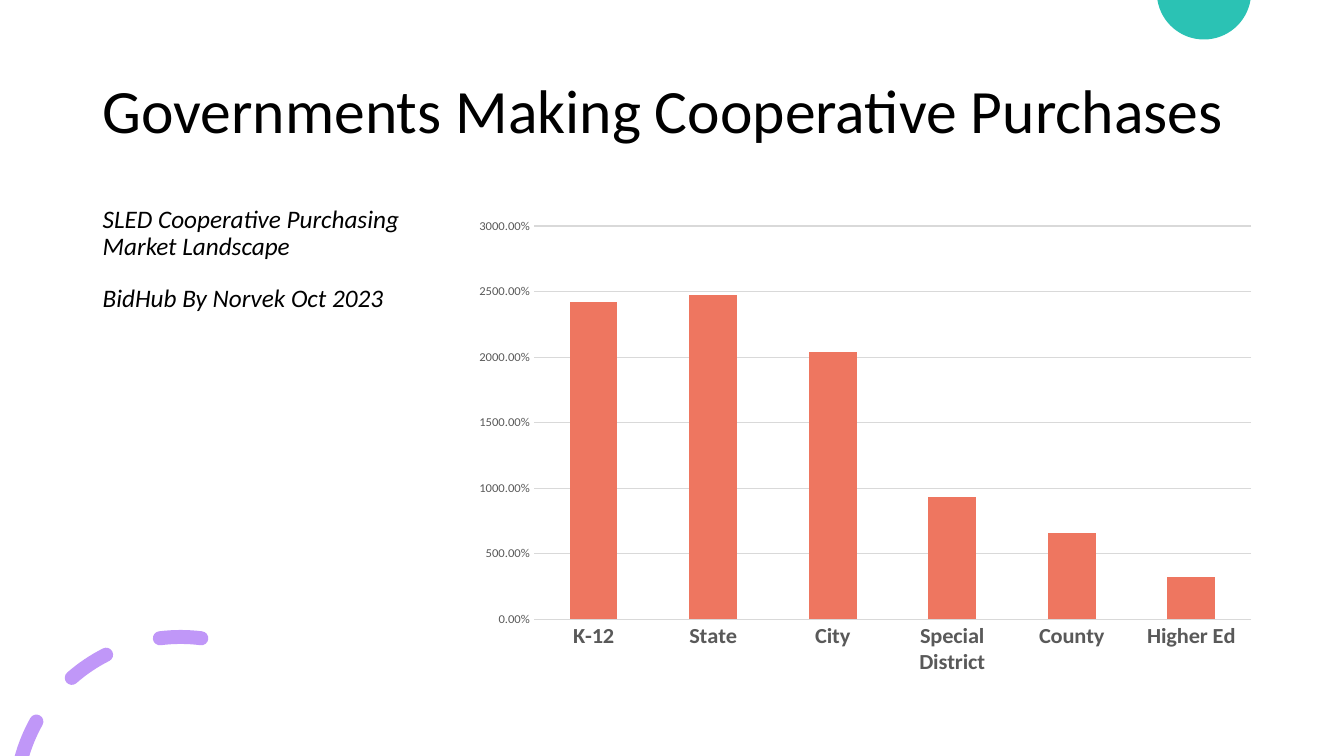
import dataclasses
import math

import lxml.etree
import pptx
import pptx.chart.data
import pptx.dml.color
import pptx.enum.chart
import pptx.enum.text
import pptx.oxml.ns
import pptx.util

Pt = pptx.util.Pt
qn = pptx.oxml.ns.qn
SLIDE_WIDTH, SLIDE_HEIGHT = 960, 540
FONT = "Calibri"
COLORS = {
    "text": "000000",
    "axis": "595959",
    "grid": "D9D9D9",
    "bar": "EE7660",
    "dash": "C097F8",
    "circle": "2BC2B4",
}
Point = tuple[float, float]


@dataclasses.dataclass
class Outline:
    """A closed outline; a segment has one point (line) or three (Bézier curve)."""
    start: Point
    segments: list[list[Point]]


@dataclasses.dataclass
class TextBlock:
    left: float
    top: float
    width: float
    height: float
    paragraphs: list[str]
    size: float
    italic: bool = False
    before: float = 0
    after: float = 0
    anchor: pptx.enum.text.MSO_ANCHOR = pptx.enum.text.MSO_ANCHOR.TOP


def rgb(name: str) -> pptx.dml.color.RGBColor:
    return pptx.dml.color.RGBColor.from_string(COLORS[name])


def on_circle(center: Point, radius: float, degrees: float) -> Point:
    angle = math.radians(degrees)
    return center[0] + radius * math.cos(angle), center[1] - radius * math.sin(angle)


def arc(center: Point, radius: float, start: float, end: float, pieces: int = 1) -> list[list[Point]]:
    """Curves along an arc, in degrees counterclockwise from the right."""
    step = (end - start) / pieces
    handle = 4 / 3 * math.tan(math.radians(step) / 4)
    reach, tilt = radius * math.hypot(1, handle), math.degrees(math.atan(handle))
    curves = []
    for i in range(pieces):
        a, b = start + i * step, start + (i + 1) * step
        curves.append([
            on_circle(center, reach, a + tilt),
            on_circle(center, reach, b - tilt),
            on_circle(center, radius, b),
        ])
    return curves


def round_dash(center: Point, radius: float, half_width: float, middle: float, spread: float) -> Outline:
    """A thick arc with round ends, or cut straight at the slide's bottom edge."""
    start, end = middle - spread, middle + spread
    outer, inner = radius + half_width, radius - half_width
    drop = center[1] - SLIDE_HEIGHT
    outer_end, inner_end = (min(end, 180 - math.degrees(math.asin(drop / r))) for r in (outer, inner))
    if outer_end < end:
        far_end = [[on_circle(center, inner, inner_end)]]
    else:
        far_end = arc(on_circle(center, radius, end), half_width, end, end + 180, 2)
    near_end = arc(on_circle(center, radius, start), half_width, start + 180, start + 360, 2)
    return Outline(
        on_circle(center, outer, start),
        arc(center, outer, start, outer_end) + far_end + arc(center, inner, inner_end, start) + near_end,
    )


def draw_outlines(slide, outlines: list[Outline], color: str) -> None:
    """Draw outlines as one shape, in hundredths of a point."""
    def units(point: Point) -> tuple[int, int]:
        return round(point[0] * 100), round(point[1] * 100)

    builder = slide.shapes.build_freeform(*units(outlines[0].start), scale=Pt(1) / 100)
    for index, outline in enumerate(outlines):
        if index:
            builder.move_to(*units(outline.start))
        builder.add_line_segments([units(p) for segment in outline.segments for p in segment], close=True)
    ornament = builder.convert_to_shape()

    # Turn each run of three points into one curve
    corners = iter(list(ornament._element.iter(qn("a:lnTo"))))
    for segment in (s for outline in outlines for s in outline.segments):
        members = [next(corners) for _ in segment]
        if len(members) == 3:
            curve = lxml.etree.Element(qn("a:cubicBezTo"))
            members[0].addprevious(curve)
            for member in members:
                curve.append(member[0])
                member.getparent().remove(member)

    ornament.shadow.inherit = False
    ornament.fill.solid()
    ornament.fill.fore_color.rgb = rgb(color)
    ornament.line.fill.background()


def style_font(font, size: float, color: str, bold: bool = False, italic: bool = False) -> None:
    font.name = FONT
    font.size = Pt(size)
    font.bold = bold
    font.italic = italic
    font.color.rgb = rgb(color)


def draw_text(slide, block: TextBlock) -> None:
    box = slide.shapes.add_textbox(Pt(block.left), Pt(block.top), Pt(block.width), Pt(block.height))
    frame = box.text_frame
    frame.word_wrap = True
    frame.vertical_anchor = block.anchor
    for index, text in enumerate(block.paragraphs):
        paragraph = frame.add_paragraph() if index else frame.paragraphs[0]
        paragraph.text = text
        paragraph.line_spacing = 0.9
        paragraph.space_before = Pt(block.before if index else 0)
        paragraph.space_after = Pt(block.after)
        style_font(paragraph.font, block.size, "text", italic=block.italic)


def set_plot_layout(chart, x: float, y: float, w: float, h: float) -> None:
    """Fix the inner plot area, in percent of the chart."""
    plot_area = chart.plots[0]._element.getparent()
    layout = plot_area.find(qn("c:layout"))
    if layout is None:
        layout = lxml.etree.Element(qn("c:layout"))
        plot_area.insert(0, layout)
    manual = lxml.etree.SubElement(layout, qn("c:manualLayout"))
    shares = {"x": x / 100, "y": y / 100, "w": w / 100, "h": h / 100}
    for tag, value in {"layoutTarget": "inner", "xMode": "edge", "yMode": "edge", **shares}.items():
        lxml.etree.SubElement(manual, qn(f"c:{tag}")).set("val", str(value))


def draw_purchases_chart(slide) -> None:
    purchases = pptx.chart.data.CategoryChartData(number_format="0.00%")
    purchases.categories = ["K-12", "State", "City", "Special District", "County", "Higher Ed"]
    purchases.add_series("Series 1", [24.2, 24.7, 20.4, 9.3, 6.6, 3.2])
    chart = slide.shapes.add_chart(
        pptx.enum.chart.XL_CHART_TYPE.COLUMN_CLUSTERED, Pt(318), Pt(144), Pt(576), Pt(338.4), purchases
    ).chart
    chart.has_title = False
    chart.has_legend = False
    style_font(chart.font, 10, "text")
    set_plot_layout(chart, 11, 5.4, 89, 87)

    columns = chart.plots[0]
    columns.gap_width = 150
    columns.vary_by_categories = False
    columns.series[0].format.fill.solid()
    columns.series[0].format.fill.fore_color.rgb = rgb("bar")

    for axis, size, bold in ((chart.category_axis, 16, True), (chart.value_axis, 9, False)):
        axis.major_tick_mark = pptx.enum.chart.XL_TICK_MARK.NONE
        axis.minor_tick_mark = pptx.enum.chart.XL_TICK_MARK.NONE
        axis.format.line.fill.background()
        style_font(axis.tick_labels.font, size, "axis", bold=bold)

    rates = chart.value_axis
    rates.tick_labels.number_format = "0.00%"
    rates.tick_labels.number_format_is_linked = False
    rates.major_gridlines.format.line.color.rgb = rgb("grid")
    rates.major_gridlines.format.line.width = Pt(0.75)


HEADING = TextBlock(
    66.25, 28.8, 828, 104.4, ["Governments Making Cooperative Purchases"], 44,
    anchor=pptx.enum.text.MSO_ANCHOR.MIDDLE,
)
CITATION = TextBlock(
    66.25, 144, 226.8, 338.4,
    ["SLED Cooperative Purchasing Market Landscape", "BidHub By Norvek Oct 2023"],
    18, italic=True, before=10, after=8,
)


def main() -> None:
    presentation = pptx.Presentation()
    presentation.slide_width = Pt(SLIDE_WIDTH)
    presentation.slide_height = Pt(SLIDE_HEIGHT)
    slide = presentation.slides.add_slide(presentation.slide_layouts[6])

    # Corner ornaments: dashes of one ring, and a circle cut by the top edge
    dashes = [round_dash((129, 573), 118, 5, middle, 7.2) for middle in (158, 124, 90)]
    draw_outlines(slide, dashes, "dash")
    center, radius, cut = (860, -5.5), 33.7, 9.4
    bowl = Outline(on_circle(center, radius, 180 + cut), arc(center, radius, 180 + cut, 360 - cut, 2))
    draw_outlines(slide, [bowl], "circle")

    # Heading and citation
    for block in (HEADING, CITATION):
        draw_text(slide, block)

    # Share of purchases by government type
    draw_purchases_chart(slide)

    presentation.save("out.pptx")


if __name__ == "__main__":
    main()
